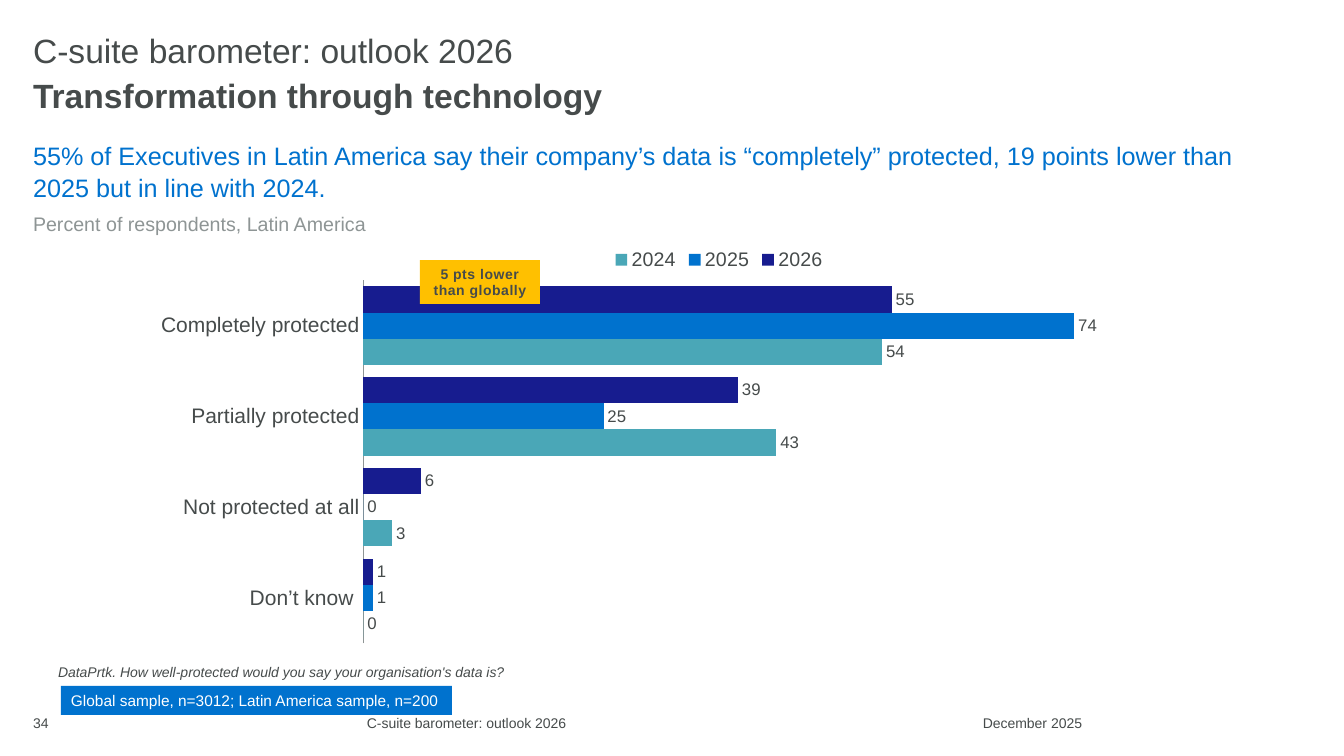
from lxml import etree
from pptx import Presentation
from pptx import util as u
from pptx.chart import data as chart_data
from pptx.dml.color import RGBColor
from pptx.enum import chart as charts, shapes, text
from pptx.oxml import parse_xml
from pptx.oxml.ns import nsdecls, qn

INK, GREY, WHITE = "464B4B", "8E9595", "FFFFFF"
BLUE, NAVY, TEAL, AMBER = "0072CE", "171C8F", "4AA7B7", "FFC000"
LEFT, CENTER, RIGHT = text.PP_ALIGN.LEFT, text.PP_ALIGN.CENTER, text.PP_ALIGN.RIGHT
TOP, MIDDLE = text.MSO_ANCHOR.TOP, text.MSO_ANCHOR.MIDDLE
FIXED, GROW = text.MSO_AUTO_SIZE.NONE, text.MSO_AUTO_SIZE.SHAPE_TO_FIT_TEXT


def px(count):
    return u.Emu(round(count * 914400 / 100.8))


def color(value):
    return RGBColor.from_string(value)


def set_font(font, size, fill=INK, name="Arial", bold=False, italic=False):
    font.size, font.name, font.bold, font.italic = u.Pt(size), name, bold, italic
    font.color.rgb = color(fill)


def write(paragraph, content, size, fill=INK, bold=False, italic=False,
          align=LEFT, line=1.0, after=0, spacing=0):
    properties = paragraph._p.get_or_add_pPr()
    properties.set("marL", "0")
    properties.set("indent", "0")
    etree.SubElement(properties, qn("a:buNone"))
    paragraph.alignment, paragraph.line_spacing = align, line
    paragraph.space_before, paragraph.space_after = u.Pt(0), u.Pt(after)
    run = paragraph.add_run()
    run.text = content
    set_font(run.font, size, fill, bold=bold, italic=italic)
    if spacing:
        run._r.get_or_add_rPr().set("spc", str(spacing))


def set_layout(element, position, target, **fractions):
    for old in element.findall(qn("c:layout")):
        element.remove(old)
    modes = "".join(f'<c:{axis}Mode val="edge"/>' for axis in "xy")
    sizes = "".join(f'<c:{key} val="{value}"/>' for key, value in fractions.items())
    element.insert(position, parse_xml(
        f'<c:layout {nsdecls("c")}><c:manualLayout>{target}{modes}{sizes}'
        "</c:manualLayout></c:layout>"))


class SlideBuilder:
    """Hold the current slide and add styled elements to it."""

    def __init__(self, slide):
        self.slide = slide

    def frame(self, shape, box, margins=(10, 5, 10, 5), anchor=TOP, size=FIXED, wrap=True):
        shape.left, shape.top, shape.width, shape.height = map(px, box)
        frame = shape.text_frame
        frame.word_wrap, frame.auto_size, frame.vertical_anchor = wrap, size, anchor
        (frame.margin_left, frame.margin_top,
         frame.margin_right, frame.margin_bottom) = map(px, margins)
        return frame

    def placeholder(self, index, box, lines, anchor=TOP):
        shape = self.slide.placeholders[index]
        frame = self.frame(shape, box, (0, 0, 0, 0), anchor)
        for number, (content, style) in enumerate(lines):
            paragraph = frame.add_paragraph() if number else frame.paragraphs[0]
            write(paragraph, content, **style)

    def label(self, box, content, frame_style, **style):
        shape = self.slide.shapes.add_textbox(*map(px, box))
        write(self.frame(shape, box, **frame_style).paragraphs[0], content, **style)

    def block(self, box, background, content, frame_style, **style):
        shape = self.slide.shapes.add_shape(shapes.MSO_SHAPE.RECTANGLE, *map(px, box))
        shape.shadow.inherit = False
        shape.fill.solid()
        shape.fill.fore_color.rgb = color(background)
        shape.line.fill.background()
        frame = self.frame(shape, box, size=GROW, **frame_style)
        write(frame.paragraphs[0], content, **style)

    def bar_chart(self, box, categories, series, maximum):
        data = chart_data.CategoryChartData(number_format="0")
        data.categories = categories
        for name, values, _ in series:
            data.add_series(name, values)
        chart = self.slide.shapes.add_chart(
            charts.XL_CHART_TYPE.BAR_CLUSTERED, *map(px, box), data).chart
        set_font(chart.font, 18, name="Calibri")
        chart.has_title = False
        plot = chart.plots[0]
        plot.gap_width, plot.overlap, plot.vary_by_categories = 47, 0, False
        for bars, (_, _, fill) in zip(plot.series, series):
            bars.format.fill.solid()
            bars.format.fill.fore_color.rgb = color(fill)
            bars.invert_if_negative = False
            labels = bars.data_labels
            labels.show_value = True
            labels.position = charts.XL_LABEL_POSITION.OUTSIDE_END
            set_font(labels.font, 12)
        axis = chart.category_axis
        axis.reverse_order, axis.has_major_gridlines = True, False
        axis.major_tick_mark = axis.minor_tick_mark = charts.XL_TICK_MARK.NONE
        axis.format.line.color.rgb = color(GREY)
        axis.format.line.width = u.Pt(0.75)
        set_font(axis.tick_labels.font, 15)
        values = chart.value_axis
        values.minimum_scale, values.maximum_scale = 0, maximum
        values.has_major_gridlines = values.visible = False
        chart.has_legend = True
        legend = chart.legend
        legend.position = charts.XL_LEGEND_POSITION.TOP
        legend.include_in_layout = False
        set_font(legend.font, 14)
        set_layout(legend._element, 1, "", x=0.49, y=0.04)
        set_layout(chart._chartSpace.find(".//" + qn("c:plotArea")), 0,
                   '<c:layoutTarget val="inner"/>', x=0.265, y=0.125, w=0.695, h=0.869)


def main():
    presentation = Presentation()
    presentation.slide_width, presentation.slide_height = px(1344), px(756)
    builder = SlideBuilder(presentation.slides.add_slide(presentation.slide_layouts[3]))

    builder.placeholder(0, (33, 33, 623, 39), [
        ("C-suite barometer: outlook 2026", dict(size=24, line=0.9))], MIDDLE)
    builder.placeholder(1, (33, 75, 808, 39), [
        ("Transformation through technology",
         dict(size=24, bold=True, line=1.05, after=6))], MIDDLE)
    builder.placeholder(2, (33, 139, 1252, 37), [
        ("55% of Executives in Latin America say their company’s data is “completely” "
         "protected, 19 points lower than 2025 but in line with 2024.",
         dict(size=18, fill=BLUE, line=1.05, after=6)),
        ("Percent of respondents, Latin America",
         dict(size=14, fill=GREY, line=1.05, after=6))])

    footers = [(33, 99, "34", LEFT),
               (132, 669, "C-suite barometer: outlook 2026", CENTER),
               (943, 139, "December 2025", RIGHT)]
    for left, width, content, align in footers:
        builder.label((left, 708, width, 30), content,
                      dict(margins=(0, 5, 0, 5), anchor=MIDDLE), size=10, align=align)

    builder.label((48, 659, 1126, 27),
                  "DataPrtk. How well-protected would you say your organisation's data is?",
                  dict(size=GROW), size=10, italic=True)
    builder.block((61, 686, 391, 29), BLUE,
                  "Global sample, n=3012; Latin America sample, n=200",
                  dict(anchor=MIDDLE, wrap=False), size=11, fill=WHITE)
    builder.bar_chart(
        (74, 228, 1092, 418),
        ["Completely protected", "Partially protected", "Not protected at all", "Don’t know "],
        [("2026", (55, 39, 6, 1), NAVY),
         ("2025", (74, 25, 0, 1), BLUE),
         ("2024", (54, 43, 3, 0), TEAL)], 79)
    builder.block((420, 260, 120, 44), AMBER, "5 pts lower than globally", {},
                  size=10, bold=True, align=CENTER, spacing=40)
    presentation.save("out.pptx")


if __name__ == "__main__":
    main()
